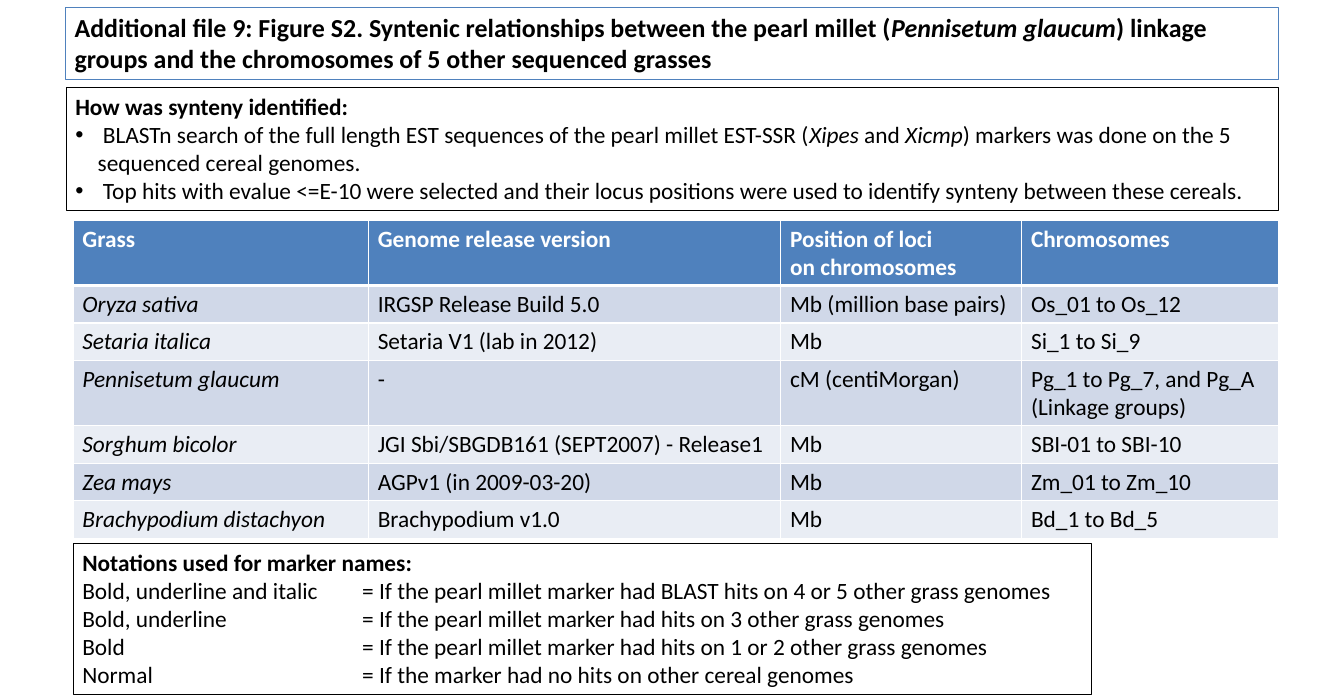
import lxml.etree
import pptx
import pptx.dml.color
import pptx.enum.text
import pptx.oxml.ns
import pptx.util
from dataclasses import dataclass

Cm = pptx.util.Cm
Pt = pptx.util.Pt

# Asterisks enclose italic words; a line feed is a line break.
TITLE = ("Additional file 9: Figure S2. Syntenic relationships between the pearl millet "
         "(*Pennisetum glaucum*) linkage groups and the chromosomes of 5 other sequenced grasses")
METHOD_HEADING = "How was synteny identified:"
METHOD_POINTS = [
    " BLASTn search of the full length EST sequences of the pearl millet EST-SSR "
    "(*Xipes* and *Xicmp*) markers was done on the 5 sequenced cereal genomes.",
    " Top hits with evalue <=E-10 were selected and their locus positions were used "
    "to identify synteny between these cereals.",
]
GENOMES = [
    ("Grass", "Genome release version", "Position of loci\non chromosomes", "Chromosomes"),
    ("*Oryza sativa*", "IRGSP Release Build 5.0", "Mb (million base pairs)", "Os_01 to Os_12"),
    ("*Setaria italica*", "Setaria V1 (lab in 2012)", "Mb", "Si_1 to Si_9"),
    ("*Pennisetum glaucum*", "-", "cM (centiMorgan)",
     "Pg_1 to Pg_7, and Pg_A\n(Linkage groups)"),
    ("*Sorghum bicolor*", "JGI Sbi/SBGDB161 (SEPT2007) - Release1", "Mb", "SBI-01 to SBI-10"),
    ("*Zea mays*", "AGPv1 (in 2009-03-20)", "Mb", "Zm_01 to Zm_10"),
    ("*Brachypodium distachyon*", "Brachypodium v1.0", "Mb", "Bd_1 to Bd_5"),
]
NOTATION_HEADING = "Notations used for marker names:"
NOTATIONS = [
    ("Bold, underline and italic",
     "= If the pearl millet marker had BLAST hits on 4 or 5 other grass genomes"),
    ("Bold, underline", "= If the pearl millet marker had hits on 3 other grass genomes"),
    ("Bold", "= If the pearl millet marker had hits on 1 or 2 other grass genomes"),
    ("Normal", "= If the marker had no hits on other cereal genomes"),
]

# Left, top, width, height in centimetres
TITLE_AREA = (1.78, 0.2, 33.02, 1.96)
METHOD_AREA = (1.8, 2.39, 33, 3.33)
TABLE_AREA = (1.99, 5.99, 32.81, 8.64)
NOTATION_AREA = (1.99, 14.79, 27.73, 4.11)
COLUMN_WIDTHS = (8.04, 11.22, 6.56, 6.99)
ROW_HEIGHTS = {1: 1.02, 2: 1.76}  # by number of text lines
BULLET_INDENT = 0.61
NOTATION_TAB = 7.62


@dataclass(frozen=True)
class Theme:
    font: str = "Calibri"
    title_size: int = 20
    body_size: int = 18
    ink: str = "000000"
    white: str = "FFFFFF"
    accent: str = "4F81BD"
    bands: tuple = ("D0D8E8", "E9EDF4")
    outline: float = 0.75
    grid: float = 1
    header_rule: float = 3


THEME = Theme()


def rgb(color):
    return pptx.dml.color.RGBColor.from_string(color)


def add_element(parent, tag, **attributes):
    element = lxml.etree.SubElement(parent, pptx.oxml.ns.qn(tag))
    for name, value in attributes.items():
        element.set(name, str(value))
    return element


def write(para, text, size=THEME.body_size, color=THEME.ink, bold=False, bullet=False, tab=None):
    properties = para._p.get_or_add_pPr()
    if bullet:
        properties.set("marL", str(Cm(BULLET_INDENT)))
        properties.set("indent", str(-Cm(BULLET_INDENT)))
        add_element(properties, "a:buFont", typeface="Arial")
        add_element(properties, "a:buChar", char="•")
    if tab:
        tabs = add_element(properties, "a:tabLst")
        add_element(tabs, "a:tab", pos=Cm(tab), algn="l")
    for part, words in enumerate(text.split("*")):
        for line, piece in enumerate(words.split("\n")):
            if line:
                para.add_line_break()
            if not piece:
                continue
            span = para.add_run()
            span.text = piece
            span.font.name = THEME.font
            span.font.size = Pt(size)
            span.font.bold = bold
            span.font.italic = part % 2 == 1
            span.font.color.rgb = rgb(color)


def add_box(page, area, heading, lines=(), outline=THEME.ink, size=THEME.body_size, **line_format):
    """Outlined box with a bold heading over plain lines."""
    box = page.shapes.add_textbox(*map(Cm, area))
    box.line.color.rgb = rgb(outline)
    box.line.width = Pt(THEME.outline)
    frame = box.text_frame
    frame.word_wrap = True
    frame.auto_size = pptx.enum.text.MSO_AUTO_SIZE.SHAPE_TO_FIT_TEXT
    write(frame.paragraphs[0], heading, size=size, bold=True)
    for line in lines:
        write(frame.add_paragraph(), line, size=size, **line_format)


def set_borders(cell, top, bottom):
    properties = cell._tc.get_or_add_tcPr()
    widths = {"L": THEME.grid, "R": THEME.grid, "T": top, "B": bottom}
    for index, (side, width) in enumerate(widths.items()):
        border = add_element(properties, f"a:ln{side}", w=Pt(width))
        fill = add_element(border, "a:solidFill")
        add_element(fill, "a:srgbClr", val=THEME.white)
        properties.insert(index, border)  # borders come before the fill


def add_genome_table(page):
    table = page.shapes.add_table(len(GENOMES), len(COLUMN_WIDTHS), *map(Cm, TABLE_AREA)).table
    for column, width in zip(table.columns, COLUMN_WIDTHS):
        column.width = Cm(width)
    for r, texts in enumerate(GENOMES):
        header = r == 0
        table.rows[r].height = Cm(ROW_HEIGHTS[max(text.count("\n") + 1 for text in texts)])
        for c, text in enumerate(texts):
            cell = table.cell(r, c)
            cell.fill.solid()
            cell.fill.fore_color.rgb = rgb(THEME.accent if header else THEME.bands[(r - 1) % 2])
            set_borders(cell,
                        top=THEME.header_rule if r == 1 else THEME.grid,
                        bottom=THEME.header_rule if header else THEME.grid)
            write(cell.text_frame.paragraphs[0], text, bold=header,
                  color=THEME.white if header else THEME.ink)


def main():
    deck = pptx.Presentation()
    deck.slide_width, deck.slide_height = Cm(36.58), Cm(19.05)
    page = deck.slides.add_slide(deck.slide_layouts[6])
    add_box(page, TITLE_AREA, TITLE, outline=THEME.accent, size=THEME.title_size)
    add_box(page, METHOD_AREA, METHOD_HEADING, METHOD_POINTS, bullet=True)
    add_genome_table(page)
    add_box(page, NOTATION_AREA, NOTATION_HEADING, map("\t".join, NOTATIONS), tab=NOTATION_TAB)
    deck.save("out.pptx")


if __name__ == "__main__":
    main()
